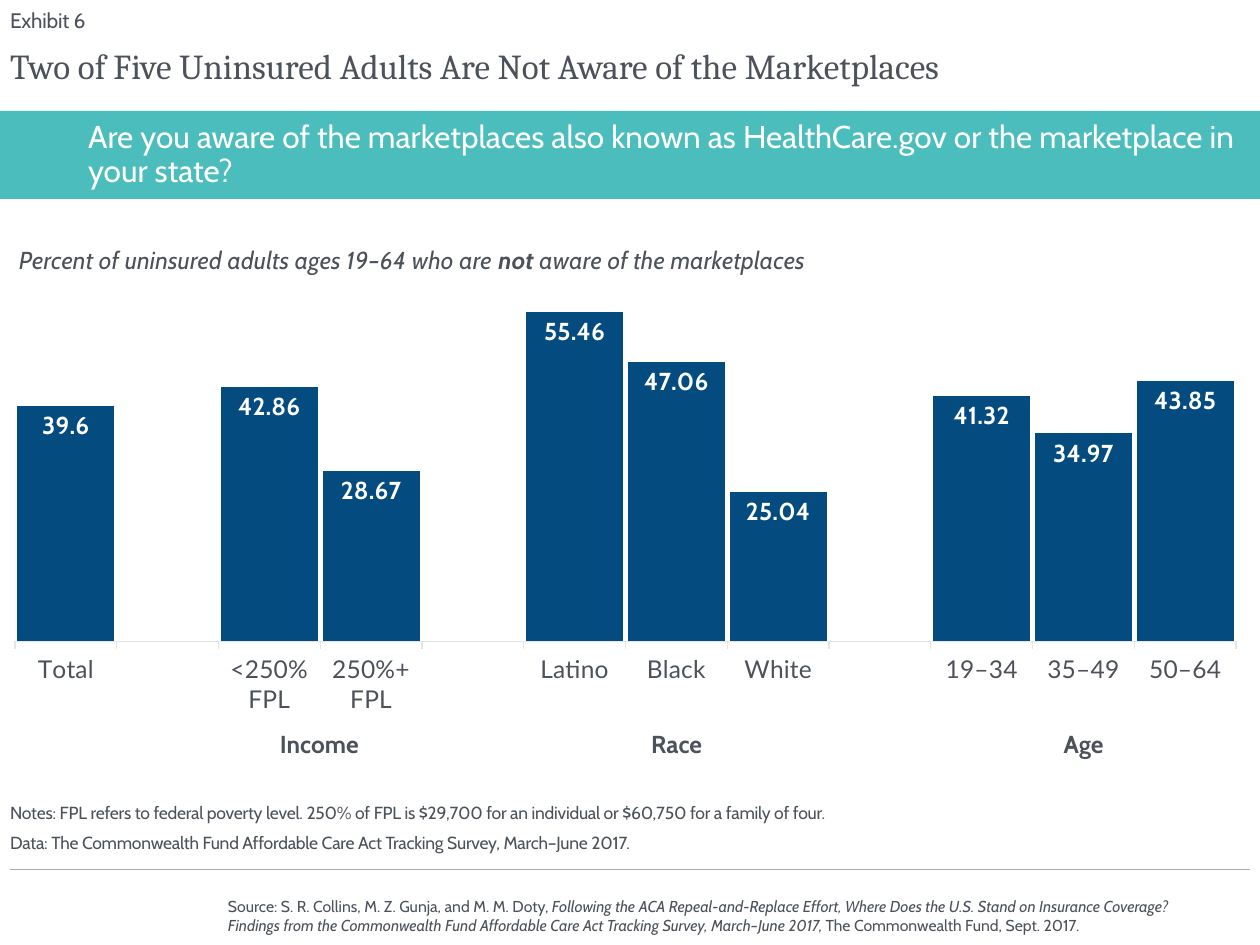
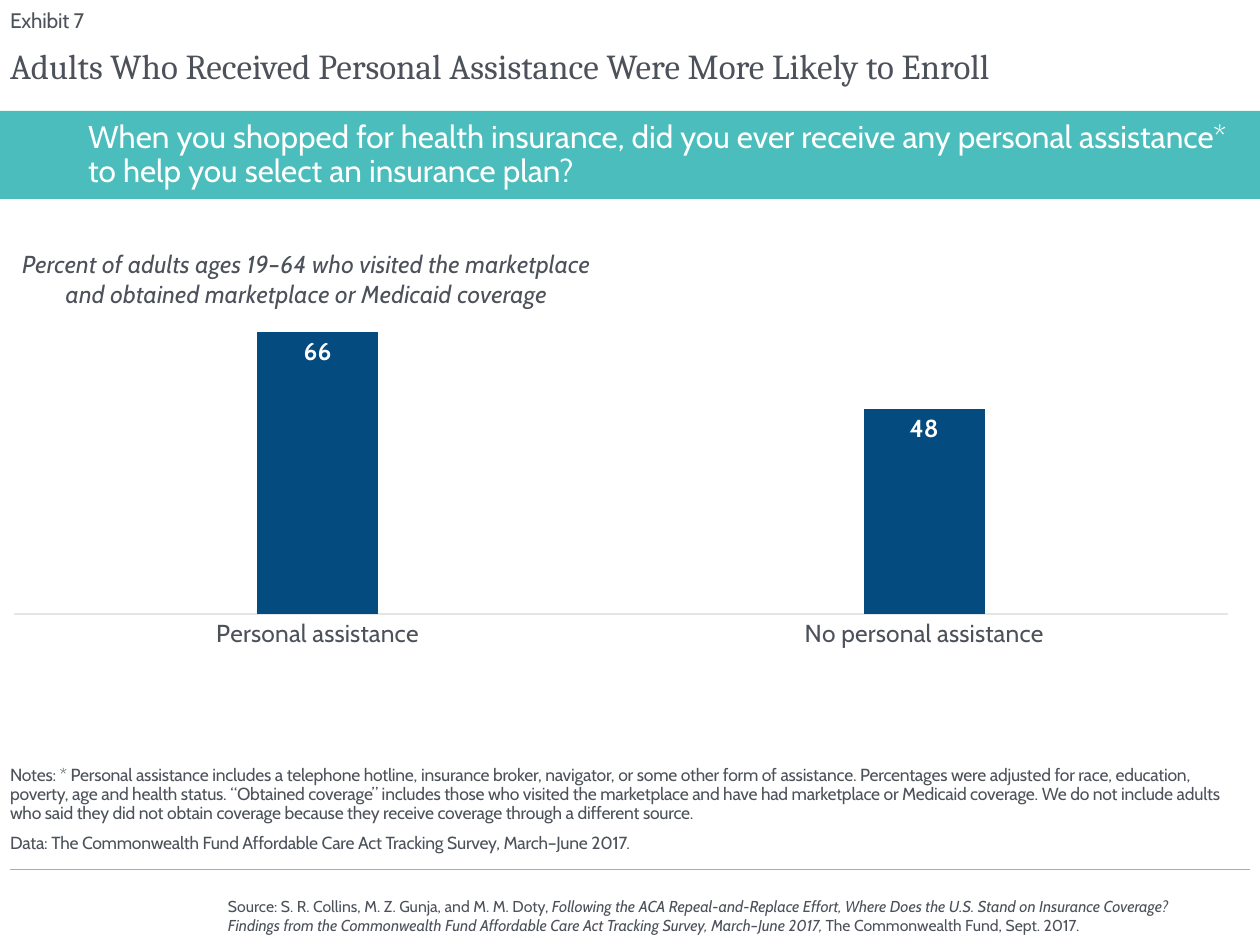
from dataclasses import dataclass
from typing import Optional

from lxml import etree
from pptx import Presentation
from pptx.chart.data import CategoryChartData
from pptx.dml.color import RGBColor
from pptx.enum.chart import XL_CHART_TYPE, XL_LABEL_POSITION, XL_TICK_MARK
from pptx.enum.shapes import MSO_CONNECTOR, MSO_SHAPE
from pptx.enum.text import MSO_ANCHOR, MSO_AUTO_SIZE, PP_ALIGN
from pptx.oxml.ns import qn
from pptx.slide import Slide
from pptx.text.text import TextFrame
from pptx.util import Inches, Pt

COLUMN = XL_CHART_TYPE.COLUMN_CLUSTERED
IN_END = XL_LABEL_POSITION.INSIDE_END
OUT, NO_TICK = XL_TICK_MARK.OUTSIDE, XL_TICK_MARK.NONE
TOP, MID, LOW = MSO_ANCHOR.TOP, MSO_ANCHOR.MIDDLE, MSO_ANCHOR.BOTTOM
LEFT, MIDST = PP_ALIGN.LEFT, PP_ALIGN.CENTER
RECT, LINE = MSO_SHAPE.RECTANGLE, MSO_CONNECTOR.STRAIGHT
FIXED = MSO_AUTO_SIZE.NONE

INK, WHITE, TEAL = "4C515A", "FFFFFF", "4ABDBC"
NAVY, RULE, AXIS = "044C7F", "ABABAB", "E3E5E7"
SANS, SERIF = "Cabin", "Cambria"
EDGE, WIDE = 0.08, 9.84

Box = tuple[float, float, float, float]
Run = tuple[str, str]  # text, then marks: "b" bold, "i" italic
Lines = list[list[Run]]


@dataclass(frozen=True)
class Look:
    size: float
    font: str = SANS
    ink: str = INK
    align: PP_ALIGN = LEFT
    lead: Optional[float] = None
    after: float = 0
    track: int = 0


@dataclass(frozen=True)
class Graph:
    box: Box
    title: Lines
    spot: tuple[float, float]
    plot: Box
    cats: list[str]
    vals: list[Optional[float]]
    top: float
    gap: int
    tick: XL_TICK_MARK
    font: str
    form: str


@dataclass(frozen=True)
class Page:
    label: str
    title: str
    ask: str
    note: str
    graph: Graph
    groups: tuple[tuple[str, float, float], ...] = ()


HEAD = Look(20, SERIF, lead=1.1)
LABEL = Look(12, track=-10)
NOTE = Look(10, lead=0.9, after=6, track=-10)
ASK = Look(18, ink=WHITE, lead=0.9)
SOURCE = Look(9)
GROUP = Look(14, align=MIDST)
CAPTION = Look(14, align=MIDST)

DATA = "Data: The Commonwealth Fund Affordable Care Act Tracking Survey, March–June 2017."
CITE: Lines = [[
    ("Source: S. R. Collins, M. Z. Gunja, and M. M. Doty, ", ""),
    ("Following the ACA Repeal-and-Replace Effort, Where Does the U.S. Stand on "
     "Insurance Coverage? Findings from the Commonwealth Fund Affordable Care Act "
     "Tracking Survey, March–June 2017, ", "i"),
    ("The Commonwealth Fund, Sept. 2017.", ""),
]]

PAGES = [
    Page(
        "Exhibit 6",
        "Two of Five Uninsured Adults Are Not Aware of the Marketplaces",
        "Are you aware of the marketplaces also known as HealthCare.gov or the "
        "marketplace in your state?",
        "Notes: FPL refers to federal poverty level. 250% of FPL is $29,700 for an "
        "individual or $60,750 for a family of four.",
        Graph(
            box=(EDGE, 1.78, WIDE, 3.94),
            title=[[("Percent of uninsured adults ages 19–64 who are ", "i"),
                    ("not", "bi"), (" aware of the marketplaces", "i")]],
            spot=(0.004, 0.03), plot=(0.004, 0.122, 0.985, 0.718),
            cats=["Total", "", "<250% FPL", "250%+ FPL", "", "Latino", "Black",
                  "White", "", "19–34", "35–49", "50–64"],
            vals=[39.6, None, 42.86, 28.67, None, 55.46, 47.06, 25.04, None,
                  41.32, 34.97, 43.85],
            top=60, gap=5, tick=OUT, font="Lato", form="General"),
        (("Income", 1.74, 1.59), ("Race", 4.18, 2.38), ("Age", 7.41, 2.38)),
    ),
    Page(
        "Exhibit 7",
        "Adults Who Received Personal Assistance Were More Likely to Enroll",
        "When you shopped for health insurance, did you ever receive any personal "
        "assistance* to help you select an insurance plan?",
        "Notes: * Personal assistance includes a telephone hotline, insurance broker, "
        "navigator, or some other form of assistance. Percentages were adjusted for "
        "race, education, poverty, age and health status. “Obtained coverage” includes "
        "those who visited the marketplace and have had marketplace or Medicaid "
        "coverage. We do not include adults who said they did not obtain coverage "
        "because they receive coverage through a different source.",
        Graph(
            box=(0.11, 1.8, 9.81, 3.55),
            title=[[("Percent of adults ages 19–64 who visited the marketplace", "i")],
                   [("and obtained marketplace or Medicaid coverage", "i")]],
            spot=(0.003, 0.037), plot=(0, 0.197, 0.982, 0.669),
            cats=["Personal assistance", "No personal assistance"],
            vals=[66, 48],
            top=70, gap=400, tick=NO_TICK, font=SANS, form="0"),
    ),
]


def paint(code: str) -> RGBColor:
    return RGBColor.from_string(code)


def dress(font, look: Look, marks: str = "") -> None:
    font.size, font.name = Pt(look.size), look.font
    font.bold, font.italic = "b" in marks, "i" in marks
    font.color.rgb = paint(look.ink)


def write(frame: TextFrame, lines: Lines, look: Look, plain: bool = False) -> None:
    """Fill a frame run by run; plain drops the bullet and indent."""
    for i, runs in enumerate(lines):
        para = frame.add_paragraph() if i else frame.paragraphs[0]
        if plain:
            props = para._p.get_or_add_pPr()
            props.set("marL", "0")
            props.set("indent", "0")
            etree.SubElement(props, qn("a:buNone"))
        para.alignment = look.align
        para.space_before, para.space_after = Pt(0), Pt(look.after)
        if look.lead:
            para.line_spacing = look.lead
        for text, marks in runs:
            run = para.add_run()
            run.text = text
            dress(run.font, look, marks)
            if look.track:
                run._r.get_or_add_rPr().set("spc", str(look.track))


def inset(frame: TextFrame, anchor: MSO_ANCHOR, pads: Box = (0, 0, 0, 0)) -> None:
    frame.word_wrap, frame.auto_size = True, FIXED
    frame.vertical_anchor = anchor
    (frame.margin_left, frame.margin_top,
     frame.margin_right, frame.margin_bottom) = map(Inches, pads)


def hold(shape, box: Box, anchor: MSO_ANCHOR, lines: Lines, look: Look) -> None:
    """Move a placeholder and fill it."""
    shape.left, shape.top, shape.width, shape.height = map(Inches, box)
    inset(shape.text_frame, anchor)
    write(shape.text_frame, lines, look, plain=True)


def place(node, index: int, **spots: float) -> None:
    """Give a chart part a fixed place, as fractions of the chart."""
    frame = node.find(qn("c:layout"))
    if frame is None:
        frame = etree.Element(qn("c:layout"))
        node.insert(index, frame)
    manual = etree.SubElement(frame, qn("c:manualLayout"))
    if "w" in spots:
        etree.SubElement(manual, qn("c:layoutTarget")).set("val", "inner")
    for mode in ("xMode", "yMode"):
        etree.SubElement(manual, qn(f"c:{mode}")).set("val", "edge")
    for key, val in spots.items():
        etree.SubElement(manual, qn(f"c:{key}")).set("val", str(val))


def add_graph(slide: Slide, graph: Graph) -> None:
    data = CategoryChartData()
    data.categories = graph.cats
    data.add_series("Series 1", graph.vals)
    chart = slide.shapes.add_chart(COLUMN, *map(Inches, graph.box), data).chart
    chart.has_legend = False
    dress(chart.font, Look(10))

    # Title and plot area
    chart.has_title = True
    title = chart.chart_title
    write(title.text_frame, graph.title, CAPTION)
    x, y = graph.spot
    place(title._element, 1, x=x, y=y)
    x, y, w, h = graph.plot
    area = chart._chartSpace.find(".//" + qn("c:plotArea"))
    place(area, 0, x=x, y=y, w=w, h=h)

    # Axes
    scale = chart.value_axis
    scale.minimum_scale, scale.maximum_scale = 0, graph.top
    scale.has_major_gridlines = scale.visible = False
    base = chart.category_axis
    base.major_tick_mark, base.minor_tick_mark = graph.tick, NO_TICK
    base.format.line.color.rgb = paint(AXIS)
    base.format.line.width = Pt(0.75)
    dress(base.tick_labels.font, Look(14, graph.font))

    # Columns and their labels
    plot = chart.plots[0]
    plot.gap_width, plot.overlap, plot.vary_by_categories = graph.gap, -27, False
    bars = plot.series[0]
    bars.format.fill.solid()
    bars.format.fill.fore_color.rgb = paint(NAVY)
    tags = bars.data_labels
    tags.show_value, tags.position = True, IN_END
    tags.number_format, tags.number_format_is_linked = graph.form, False
    dress(tags.font, Look(14, ink=WHITE), "b")


def add_text(slide: Slide, box: Box, lines: Lines, look: Look,
             anchor: MSO_ANCHOR, pads: Box = (0, 0, 0, 0)) -> None:
    frame = slide.shapes.add_textbox(*map(Inches, box)).text_frame
    inset(frame, anchor, pads)
    write(frame, lines, look)


def add_foot(slide: Slide) -> None:
    add_text(slide, (1.81, 6.97, 7.46, 0.45), CITE, SOURCE, LOW)
    rule = slide.shapes.add_connector(
        LINE, *map(Inches, (EDGE + WIDE, 6.9, EDGE, 6.9)))
    rule.line.color.rgb, rule.line.width = paint(RULE), Pt(0.75)
    etree.SubElement(rule._element.spPr, qn("a:effectLst"))


def add_band(slide: Slide, text: str) -> None:
    band = slide.shapes.add_shape(RECT, *map(Inches, (0, 0.88, 10, 0.7)))
    band.shadow.inherit = False
    band.fill.solid()
    band.fill.fore_color.rgb = paint(TEAL)
    band.line.fill.background()
    inset(band.text_frame, MID, (0.7, 0.05, 0.1, 0.05))
    write(band.text_frame, [[(text, "")]], ASK)


def add_page(deck, page: Page) -> None:
    slide = deck.slides.add_slide(deck.slide_layouts[3])
    head, label, note = list(slide.placeholders)[:3]
    for spare in list(slide.placeholders)[3:]:
        spare._element.getparent().remove(spare._element)
    add_foot(slide)
    add_band(slide, page.ask)
    hold(head, (EDGE, 0.32, WIDE, 0.83), TOP, [[(page.title, "")]], HEAD)
    hold(label, (EDGE, 0.01, WIDE, 0.25), LOW, [[(page.label, "")]], LABEL)
    hold(note, (EDGE, 6.23, WIDE, 0.54), LOW,
         [[(page.note, "")], [(DATA, "")]], NOTE)
    add_graph(slide, page.graph)
    for name, left, width in page.groups:
        add_text(slide, (left, 5.74, width, 0.34), [[(name, "b")]], GROUP,
                 TOP, (0.1, 0.05, 0.1, 0.05))


def main() -> None:
    deck = Presentation()
    deck.slide_width, deck.slide_height = Inches(10), Inches(7.5)
    for page in PAGES:
        add_page(deck, page)
    deck.save("out.pptx")


if __name__ == "__main__":
    main()
